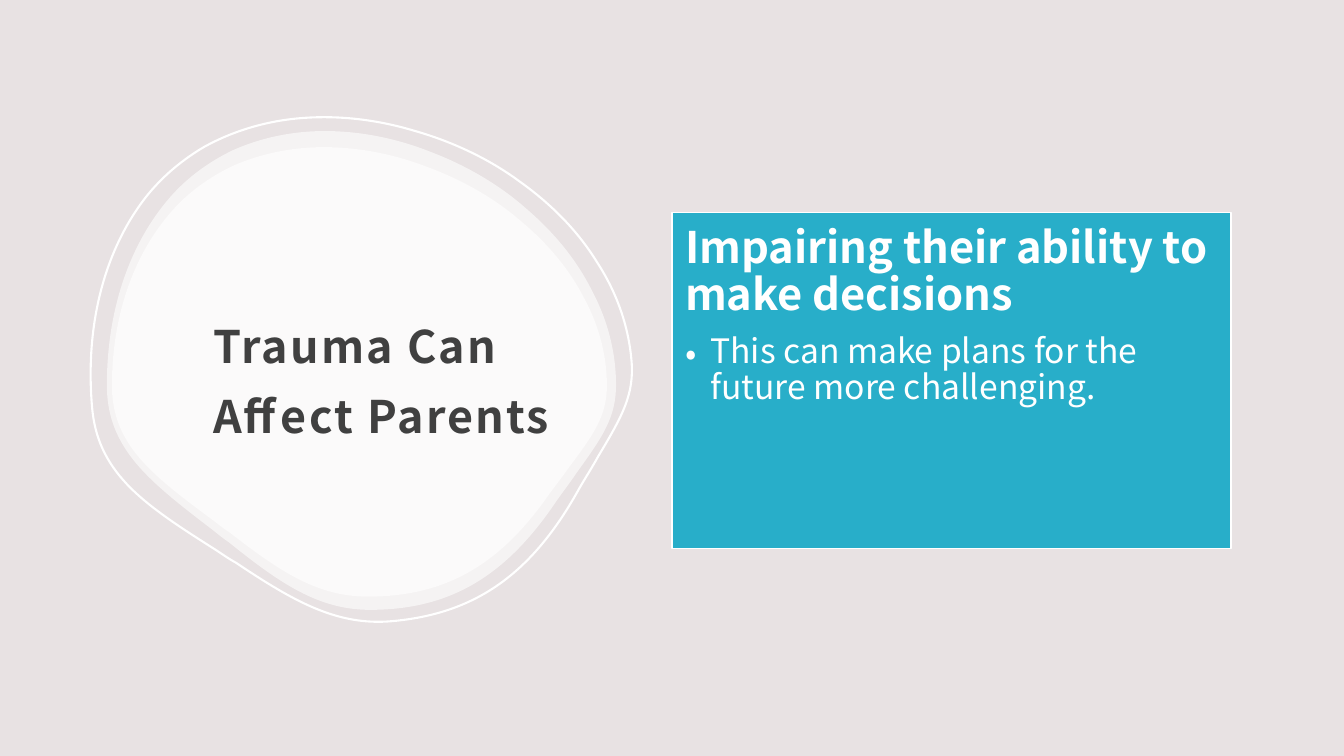
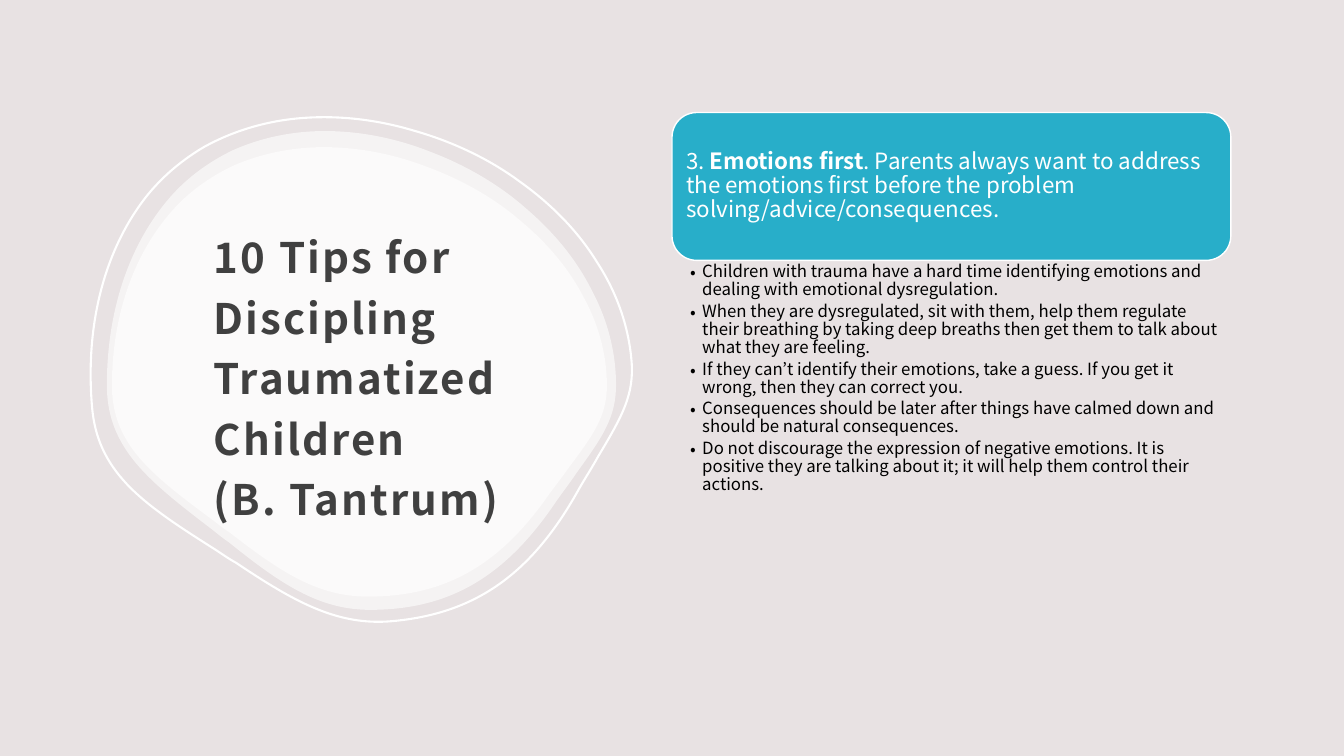
from copy import deepcopy

from lxml import etree
from pptx import Presentation
from pptx.dml.color import RGBColor
from pptx.enum.shapes import MSO_SHAPE
from pptx.enum.text import MSO_ANCHOR, MSO_AUTO_SIZE, PP_ALIGN
from pptx.oxml.ns import qn
from pptx.util import Inches, Pt

RECT, ROUND_RECT = MSO_SHAPE.RECTANGLE, MSO_SHAPE.ROUNDED_RECTANGLE
TOP, MIDDLE = MSO_ANCHOR.TOP, MSO_ANCHOR.MIDDLE
LEFT = PP_ALIGN.LEFT
NO_AUTOFIT = MSO_AUTO_SIZE.NONE

FONT = "Noto Sans CJK JP"
BACKGROUND = RGBColor(0xE8, 0xE2, 0xE3)
TEAL = RGBColor(0x28, 0xAE, 0xC9)
WHITE = RGBColor(0xFF, 0xFF, 0xFF)
BLACK = RGBColor(0x00, 0x00, 0x00)
TITLE_GREY = RGBColor(0x40, 0x40, 0x40)

prs = Presentation()
prs.slide_width, prs.slide_height = Inches(13.33), Inches(7.5)
COL, ROW = prs.slide_width / 12, prs.slide_height / 9
prs.slide_master.background.fill.solid()
prs.slide_master.background.fill.fore_color.rgb = BACKGROUND

# Pebble outline in inches: closed cubic Bézier segments, the last one
# ending where the first one starts.
PEBBLE_CURVES = [
    (2.89, 1.3, 2.58, 1.37, 2.31, 1.49),
    (2.06, 1.61, 1.83, 1.78, 1.65, 2),
    (1.27, 2.46, 1.06, 3.1, 1.06, 3.82),
    (1.06, 4.1, 1.14, 4.33, 1.32, 4.56),
    (1.51, 4.8, 1.8, 5.02, 2.1, 5.25),
    (2.15, 5.29, 2.21, 5.34, 2.27, 5.38),
    (2.78, 5.79, 3.16, 6.05, 3.67, 6.05),
    (4.45, 6.05, 5.01, 5.73, 5.52, 4.97),
    (5.59, 4.87, 5.66, 4.78, 5.72, 4.69),
    (5.98, 4.33, 6.11, 4.14, 6.11, 3.82),
    (6.11, 3.5, 6.03, 3.18, 5.87, 2.88),
    (5.72, 2.58, 5.5, 2.31, 5.22, 2.07),
    (4.95, 1.83, 4.62, 1.64, 4.28, 1.51),
    (3.93, 1.37, 3.57, 1.3, 3.22, 1.3),
]

# Left, top, width, height in inches, rotation, filled or outlined
PEBBLES = [
    (1.06, 1.3, 5.05, 4.75, 0, True),
    (1.11, 1.46, 4.91, 4.46, 0, True),
    (0.89, 1.13, 5.37, 5.05, 355, False),
]


def add_panel(s, kind, top, height, insets, anchor):
    """Add a right-hand panel, teal for a shape kind and bare for None."""
    place = [round(v) for v in (6 * COL, top * ROW, 4.99 * COL, height * ROW)]
    if kind is None:
        sp = s.shapes.add_textbox(*place)
    else:
        sp = s.shapes.add_shape(kind, *place)
        sp.shadow.inherit = False
        sp.fill.solid()
        sp.fill.fore_color.rgb = TEAL
        sp.line.color.rgb = WHITE
        sp.line.width = Pt(1)
    tf = sp.text_frame
    tf.word_wrap = True
    tf.vertical_anchor = anchor
    (tf.margin_left, tf.margin_top,
     tf.margin_right, tf.margin_bottom) = [Inches(v) for v in insets]
    return tf


def fill_paragraph(p, runs, size, color, line_spacing, after=0, hang=0):
    """Write (text, bold) runs; hang is the bullet's hanging indent in inches."""
    p.alignment = LEFT
    p.line_spacing = line_spacing
    p.space_before, p.space_after = Pt(0), Pt(after)
    if hang:
        p.level = 1
        pPr = p._p.get_or_add_pPr()
        pPr.set("marL", str(Inches(hang)))
        pPr.set("indent", str(-Inches(hang)))
        etree.SubElement(pPr, qn("a:buFont")).set("typeface", FONT)
        etree.SubElement(pPr, qn("a:buChar")).set("char", "•")
    for text, bold in runs:
        r = p.add_run()
        r.text = text
        r.font.name, r.font.size, r.font.bold = FONT, Pt(size), bold
        r.font.color.rgb = color


SLIDES = [
    dict(title=["Trauma Can Affect Parents"], size=32, spacing=1.3, panels=[
        dict(box=(RECT, 2.53, 4, [0.13] * 4, TOP), paragraphs=[
            ([("Impairing their ability to make decisions", True)],
             31, WHITE, 0.9, 10.85),
            ([("This can make plans for the future more challenging.", False)],
             24, WHITE, 0.9, 3.6, 0.25),
        ]),
    ]),
    dict(title=["10 Tips for Discipling Traumatized Children", "(B. Tantrum)"],
         size=30, spacing=1.2, panels=[
        dict(box=(ROUND_RECT, 1.34, 1.76, [0.07] * 4, MIDDLE), paragraphs=[
            ([("3. ", False), ("Emotions first", True),
              (". Parents always want to address the emotions first before "
               "the problem solving/advice/consequences.", False)],
             16, WHITE, 0.9, 5.6),
        ]),
        dict(box=(None, 3.11, 4.61, (0.18, 0.02, 0.12, 0.02), TOP), paragraphs=[
            ([(text, False)], 12, BLACK, 0.9, 2.4, 0.12) for text in (
                "Children with trauma have a hard time identifying emotions "
                "and dealing with emotional dysregulation.",
                "When they are dysregulated, sit with them, help them regulate "
                "their breathing by taking deep breaths then get them to talk "
                "about what they are feeling.",
                "If they can’t identify their emotions, take a guess. If you "
                "get it wrong, then they can correct you.",
                "Consequences should be later after things have calmed down "
                "and should be natural consequences.",
                "Do not discourage the expression of negative emotions. It is "
                "positive they are talking about it; it will help them control "
                "their actions.",
            )
        ]),
    ]),
]

for content in SLIDES:
    s = prs.slides.add_slide(prs.slide_layouts[5])

    for left, top, width, height, rotation, filled in PEBBLES:
        corners = [(Inches(c[4]), Inches(c[5])) for c in PEBBLE_CURVES]
        builder = s.shapes.build_freeform(*corners[-1])
        builder.add_line_segments(corners, close=True)
        sp = builder.convert_to_shape()
        # Bend each straight segment into its curve.
        segments = list(sp._element.iter(qn("a:lnTo")))
        for segment, curve in zip(segments, PEBBLE_CURVES):
            bend = etree.Element(qn("a:cubicBezTo"))
            for x, y in zip(curve[::2], curve[1::2]):
                pt = etree.SubElement(bend, qn("a:pt"))
                pt.set("x", str(Inches(x) - sp.left))
                pt.set("y", str(Inches(y) - sp.top))
            segment.getparent().replace(segment, bend)
        sp.left, sp.top = Inches(left), Inches(top)
        sp.width, sp.height = Inches(width), Inches(height)
        sp.rotation = rotation
        sp.shadow.inherit = False
        if filled:
            sp.fill.solid()
            sp.fill.fore_color.rgb = WHITE
            color = sp._element.spPr.find(qn("a:solidFill"))[0]
            etree.SubElement(color, qn("a:alpha")).set("val", "60000")
            sp.line.fill.background()
        else:
            sp.fill.background()
            sp.line.color.rgb = WHITE
            sp.line.width = Pt(1.5)

    title = s.shapes.title
    s.shapes._spTree.append(title._element)  # in front of the pebbles
    title.left, title.top = round(1.8 * COL), round(2.5 * ROW)
    title.width, title.height = round(3.26 * COL), round(3.85 * ROW)
    tf = title.text_frame
    tf.word_wrap = True
    tf.auto_size = NO_AUTOFIT
    tf.vertical_anchor = MIDDLE
    tf.margin_left = tf.margin_top = tf.margin_right = Inches(0.12)
    tf.margin_bottom = Inches(0.1)
    p = tf.paragraphs[0]
    for i, line in enumerate(content["title"]):
        if i:
            p.add_line_break()
        fill_paragraph(p, [(line, True)], content["size"], TITLE_GREY,
                       content["spacing"])
    for r in p.runs:
        r._r.get_or_add_rPr().set("spc", "150")
    for br in p._p.findall(qn("a:br")):
        br.append(deepcopy(p.runs[0]._r.rPr))

    for panel in content["panels"]:
        tf = add_panel(s, *panel["box"])
        for i, paragraph in enumerate(panel["paragraphs"]):
            p = tf.add_paragraph() if i else tf.paragraphs[0]
            fill_paragraph(p, *paragraph)

prs.save("out.pptx")
